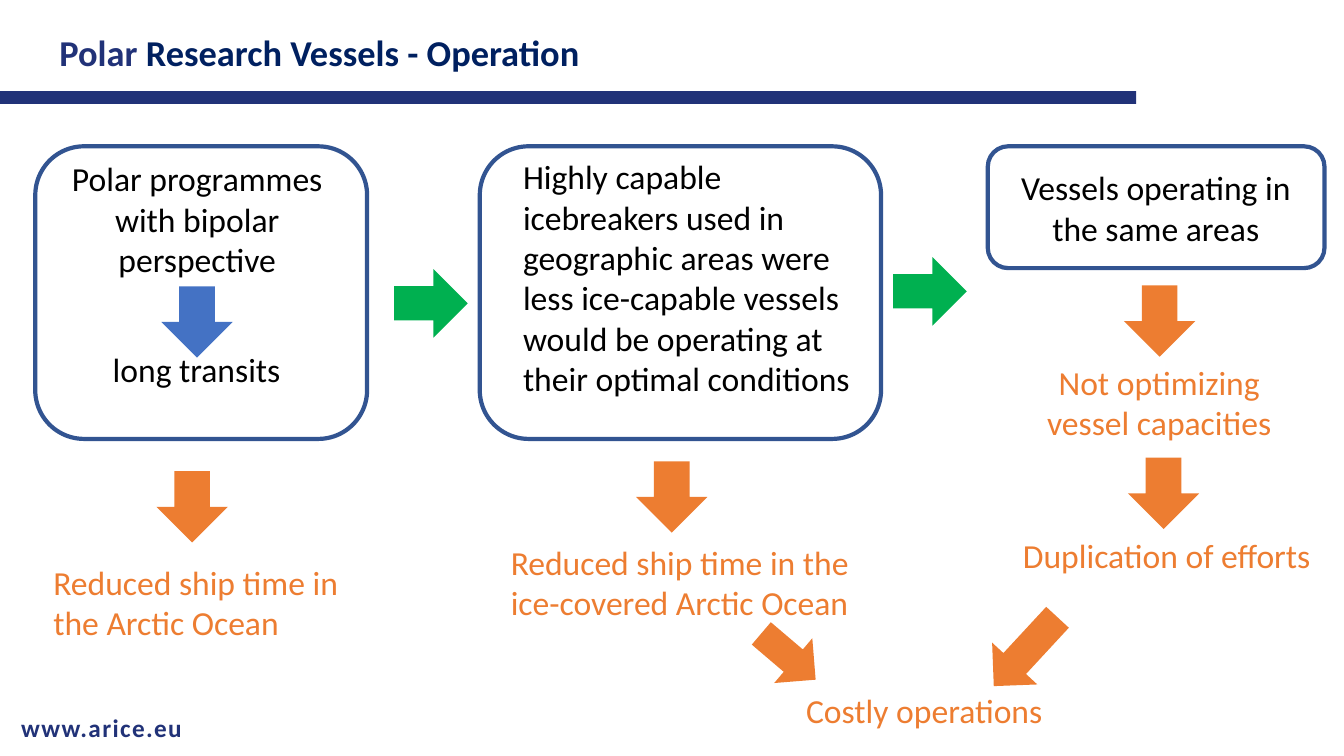
from pptx import Presentation
from pptx.dml.color import RGBColor
from pptx.enum.shapes import MSO_SHAPE
from pptx.enum.text import PP_ALIGN
from pptx.util import Pt

RECT = MSO_SHAPE.RECTANGLE
ROUND = MSO_SHAPE.ROUNDED_RECTANGLE
ARROW = MSO_SHAPE.RIGHT_ARROW
LEFT, MID = PP_ALIGN.LEFT, PP_ALIGN.CENTER

NAVY = RGBColor(0x21, 0x32, 0x78)
DARK = RGBColor(0x00, 0x20, 0x60)
EDGE = RGBColor(0x32, 0x54, 0x91)
BLUE = RGBColor(0x44, 0x72, 0xC4)
GREEN = RGBColor(0x00, 0xB0, 0x50)
ORANGE = RGBColor(0xED, 0x7D, 0x31)
BLACK = RGBColor(0, 0, 0)

SIDE = 51  # side of a square arrow


def add_text(slide, text, x, y, w, h, color=BLACK, size=24, align=LEFT,
             bold=False, wrap=True):
    area = slide.shapes.add_textbox(Pt(x), Pt(y), Pt(w), Pt(h))
    area.text_frame.word_wrap = wrap
    para = area.text_frame.paragraphs[0]
    para.alignment = align
    para.font.name = "Calibri"
    para.font.size = Pt(size)
    para.font.bold = bold
    para.font.color.rgb = color
    para.add_run().text = text
    return para


def add_solid(slide, kind, x, y, w, h, color, turn=0):
    shape = slide.shapes.add_shape(kind, Pt(x), Pt(y), Pt(w), Pt(h))
    shape.shadow.inherit = False
    shape.fill.solid()
    shape.fill.fore_color.rgb = color
    shape.line.fill.background()
    shape.rotation = turn


def add_down(slide, x, y, color=ORANGE):
    add_solid(slide, ARROW, x, y, SIDE, SIDE, color, 90)


def add_frame(slide, x, y, w, h):
    shape = slide.shapes.add_shape(ROUND, Pt(x), Pt(y), Pt(w), Pt(h))
    shape.shadow.inherit = False
    shape.fill.background()
    shape.line.color.rgb = EDGE
    shape.line.width = Pt(3)


def add_head(slide, x, y, w, h):
    """Title and the rule below it."""
    para = add_text(slide, "Polar ", x + 35.3, y + 18, 488, 39, NAVY, 26,
                    bold=True)
    rest = para.add_run()
    rest.text = "Research Vessels - Operation"
    rest.font.color.rgb = DARK
    add_solid(slide, RECT, x, y + h - 9, w, 9, NAVY)


def add_foot(slide, x, y, w, h):
    """Web address with spaced letters."""
    para = add_text(slide, "www.arice.eu", x, y, w, h, NAVY, 18, bold=True)
    para.runs[0]._r.get_or_add_rPr().set("spc", "100")


def add_transit(slide, x, y, w, h):
    """Left column: long transits and their effect."""
    add_text(slide, "Polar programmes with bipolar perspective",
             x + 2.2, y + 5, w - 10, 124, align=MID)
    add_down(slide, x + 90, y + 100, BLUE)
    add_text(slide, "long transits", x + 47.5, y + 141, 135.5, 36,
             align=MID, wrap=False)
    add_frame(slide, x, y, w, h)
    add_down(slide, x + 86.5, y + h + 23)
    add_text(slide, "Reduced ship time in the Arctic Ocean",
             x + 5.8, y + h + 84, w - 3.5, 65.5, ORANGE)


def add_ice(slide, x, y, w, h):
    """Middle column: icebreaker use, leading to cost."""
    add_text(slide, "Highly capable icebreakers used in geographic areas "
             "were less ice-capable vessels would be operating at their "
             "optimal conditions", x + 23.8, y + 3.6, w - 23.8, 181.5)
    add_frame(slide, x, y, w, h)
    add_down(slide, x + 111.6, y + h + 16)
    add_text(slide, "Reduced ship time in the ice-covered Arctic Ocean",
             x + 15.1, y + h + 70, w - 30.3, 65.5, ORANGE)
    add_solid(slide, ARROW, x + 195, y + h + 134.5, SIDE, 42, ORANGE, 40.4)
    add_text(slide, "Costly operations", x + 226, y + h + 175.7, 256, 36,
             ORANGE)


def add_area(slide, x, y, w, h):
    """Right column: shared areas, leading to cost."""
    add_text(slide, "Vessels operating in the same areas",
             x + 8, y + 11.5, w - 16.5, 65.5, align=MID)
    add_frame(slide, x, y, w, h)
    add_down(slide, x + 97.2, y + h + 12.3)
    add_text(slide, "Not optimizing vessel capacities",
             x + 24.5, y + h + 63.4, 195.8, 65.5, ORANGE, align=MID)
    add_down(slide, x + 100, y + h + 135.4)
    add_text(slide, "Duplication of efforts", x + 18, y + h + 187.2,
             w - 18, 36, ORANGE, wrap=False)
    add_solid(slide, ARROW, x - 6.5, y + h + 252, 67, 44, ORANGE, 132.8)


def main():
    deck = Presentation()
    deck.slide_width, deck.slide_height = Pt(960), Pt(540)
    slide = deck.slides.add_slide(deck.slide_layouts[6])
    add_head(slide, 0, 0, 811.5, 74.2)
    add_foot(slide, 8, 505.5, 144, 29)
    top = 104.5
    add_transit(slide, 25.2, top, 237, 209)
    add_ice(slide, 342.7, top, 286.6, 209)
    add_area(slide, 705.6, top, 240.5, 87)
    # Links between the columns
    for x, y in ((281.5, 192.2), (638, 183.6)):
        add_solid(slide, ARROW, x, y, 52.6, 49, GREEN)
    deck.save("out.pptx")


if __name__ == "__main__":
    main()
